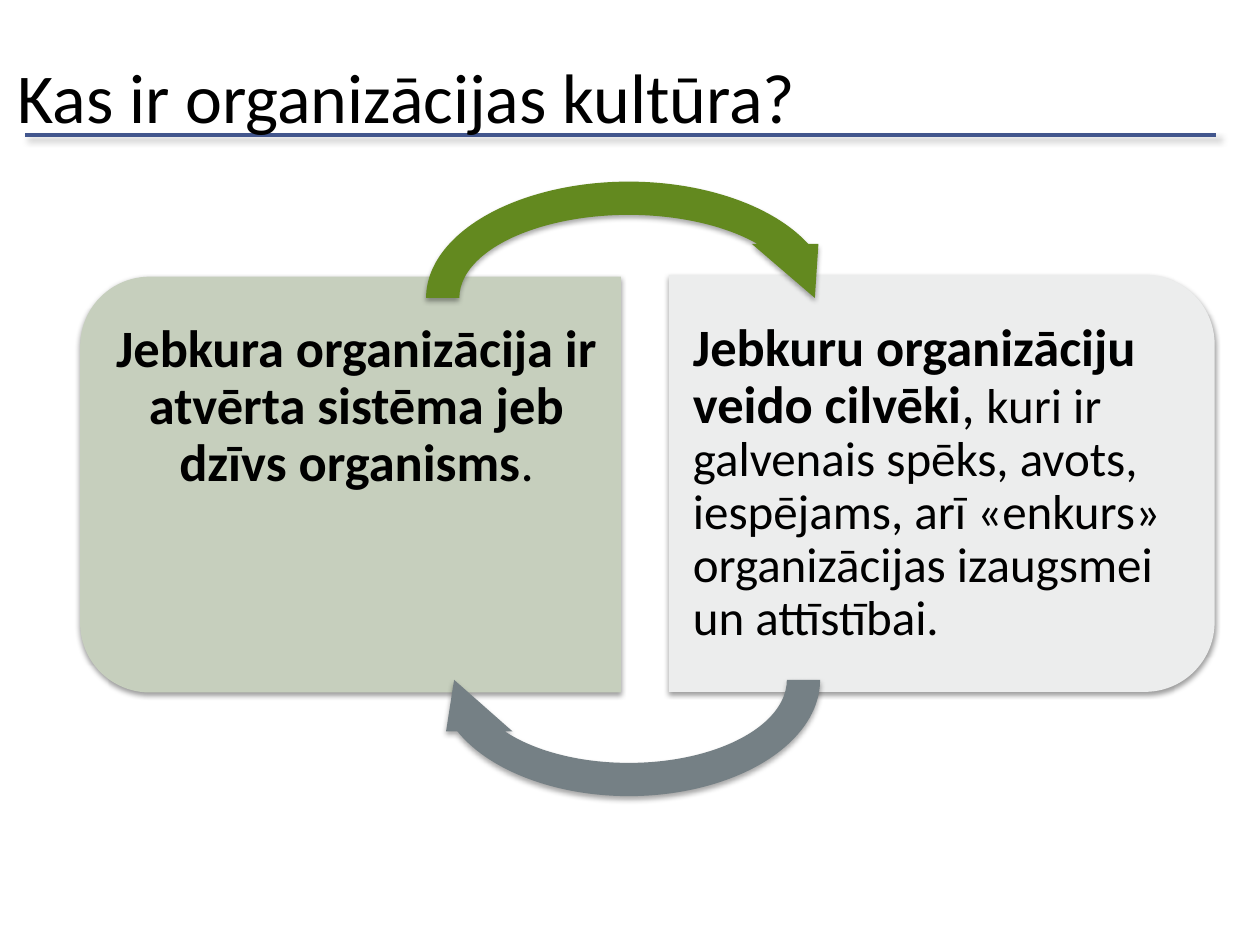
from lxml.etree import SubElement
from pptx import Presentation
from pptx.dml.color import RGBColor
from pptx.enum.shapes import MSO_CONNECTOR as Connector, MSO_SHAPE as Shape
from pptx.enum.text import MSO_ANCHOR as Anchor, PP_ALIGN as Align
from pptx.oxml.ns import qn
from pptx.util import Pt

FONT = "Calibri"
BLACK = "000000"


def color(value):
    return RGBColor.from_string(value)


def add_shadow(sp, opacity, blur, dist, angle):
    spPr = sp.element.spPr
    effects = SubElement(spPr, qn("a:effectLst"))
    shadow = SubElement(effects, qn("a:outerShdw"), blurRad=str(Pt(blur)),
                        dist=str(Pt(dist)), dir=str(angle * 60000),
                        rotWithShape="0")
    clr = SubElement(shadow, qn("a:srgbClr"), val=BLACK)
    SubElement(clr, qn("a:alpha"), val=str(opacity * 1000))


def add_rule(slide, x1, x2, y):
    line = slide.shapes.add_connector(Connector.STRAIGHT, Pt(x1), Pt(y), Pt(x2), Pt(y))
    line.line.color.rgb = color("42568D")
    line.line.width = Pt(2.25)
    add_shadow(line, 40, 4, 3, 45)


def add_shape(slide, kind, box, rotation, fill, adjustments, shadow):
    sp = slide.shapes.add_shape(kind, *map(Pt, box))
    sp.rotation = rotation
    for i, value in enumerate(adjustments):
        sp.adjustments[i] = value
    sp.fill.solid()
    sp.fill.fore_color.rgb = color(fill)
    sp.line.fill.background()
    add_shadow(sp, *shadow)


def add_card(slide, box, rotation, fill):
    add_shape(slide, Shape.ROUND_2_SAME_RECTANGLE, box, rotation, fill,
              (0.167, 0), (38, 3.1, 1.6, 90))


def add_arrow(slide, box, rotation, fill):
    add_shape(slide, Shape.CIRCULAR_ARROW, box, rotation, fill,
              (0.125, 11.423, 204.577, 108, 0.125), (35, 3.1, 1.8, 90))


def add_text(slide, box, runs, insets=(7.2, 3.6, 7.2, 3.6), align=Align.LEFT,
             spacing=1.0, anchor=Anchor.TOP):
    tf = slide.shapes.add_textbox(*map(Pt, box)).text_frame
    tf.word_wrap = True
    tf.vertical_anchor = anchor
    tf.margin_left, tf.margin_top, tf.margin_right, tf.margin_bottom = map(Pt, insets)
    p = tf.paragraphs[0]
    p.alignment = align
    p.line_spacing = spacing
    for text, size, bold in runs:
        r = p.add_run()
        r.text = text
        r.font.name = FONT
        r.font.size = Pt(size)
        r.font.bold = bold
        r.font.color.rgb = color(BLACK)


def main():
    prs = Presentation()
    prs.slide_width, prs.slide_height = Pt(720), Pt(540)
    s = prs.slides.add_slide(prs.slide_layouts[6])

    add_rule(s, 14.4, 694.8, 77)
    add_text(s, (3, 9.4, 648, 90), [("Kas ir organizācijas kultūra?", 40, False)],
             anchor=Anchor.MIDDLE)

    add_card(s, (81.5, 122.4, 237.6, 309), 270, "C6CFBD")
    add_text(s, (57.6, 169.2, 297.4, 214.6), [
        ("Jebkura organizācija ir atvērta sistēma jeb dzīvs organisms", 30, True),
        (".", 30, False),
    ], (8.6, 15, 13.7, 15), Align.CENTER, 0.9)

    add_card(s, (419, 120.3, 238.3, 311.8), 90, "ECEDED")
    add_text(s, (382.3, 168.5, 300.2, 215.3), [
        ("Jebkuru organizāciju veido cilvēki", 30, True),
        (", ", 30, False),
        ("kuri ir galvenais spēks, avots, iespējams, arī «enkurs» "
         "organizācijas izaugsmei un attīstībai.", 28, False),
    ], (13.7, 15, 8.6, 15), spacing=0.9)

    add_arrow(s, (234, 94.3, 250.6, 151.9), 0, "63891F")
    add_arrow(s, (240.5, 312.5, 237.6, 151.9), 180, "758085")

    prs.save("out.pptx")


if __name__ == "__main__":
    main()
